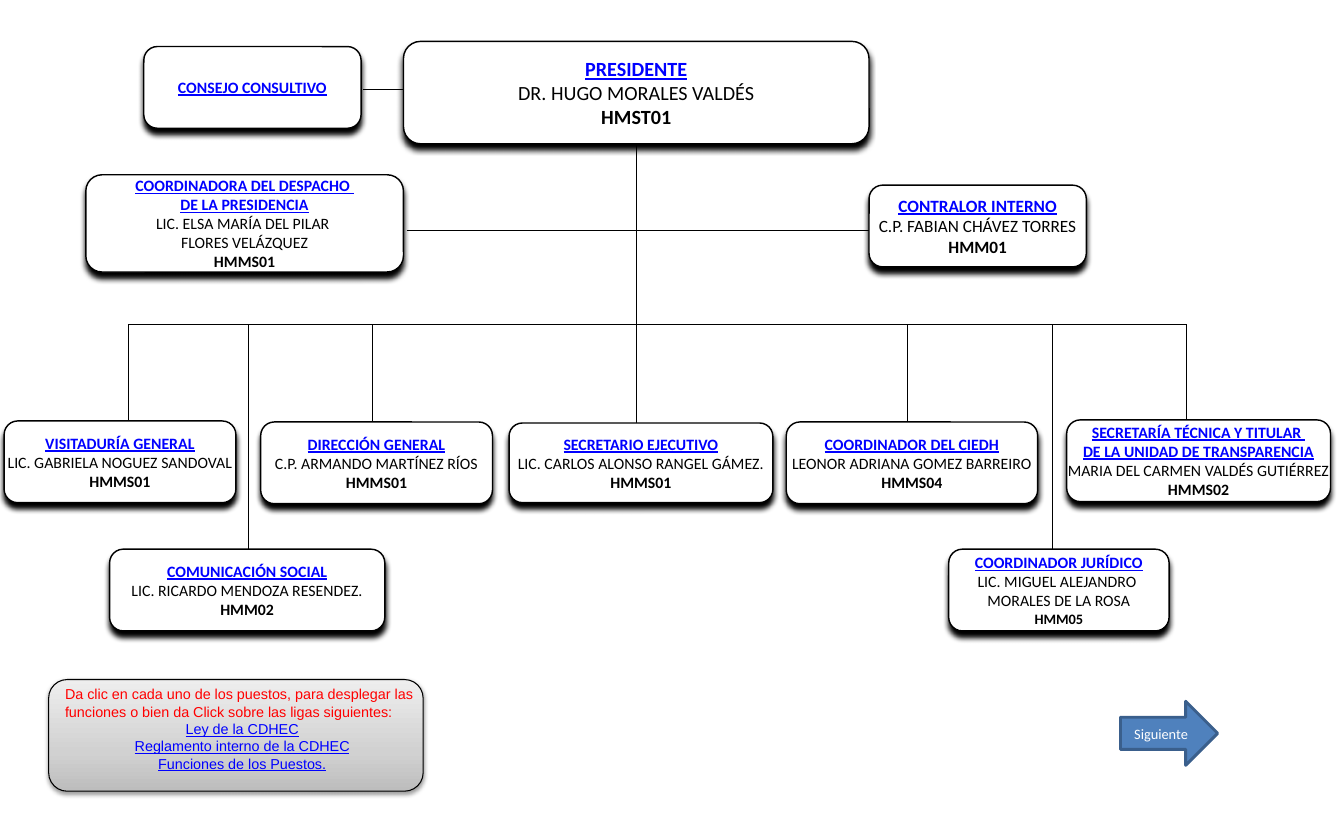
from copy import deepcopy
from dataclasses import dataclass

from lxml.etree import SubElement
from pptx import Presentation
from pptx.dml.color import RGBColor
from pptx.enum.shapes import MSO_CONNECTOR, MSO_SHAPE
from pptx.enum.text import MSO_ANCHOR, MSO_AUTO_SIZE, PP_ALIGN
from pptx.oxml.ns import qn
from pptx.util import Inches, Pt


@dataclass(frozen=True)
class Theme:
    # Colours
    ink: str = "000000"
    paper: str = "FFFFFF"
    link: str = "0000FF"
    notice: str = "FF0000"
    arrow: str = "4F81BD"
    arrow_edge: str = "3A5F8C"
    panel_stops: tuple = ((0, "BDBDBD"), (0.35, "D1D1D1"), (1, "EEEEEE"))
    # Fonts and sizes
    chart_font: str = "Calibri"
    notice_font: str = "Arial"
    small: int = 10
    normal: int = 11
    medium: int = 12
    large: int = 14
    # Lines in points; shadows as opacity %, blur and distance in points
    hairline: float = 0.75
    box_line: float = 1
    arrow_line: float = 2
    box_shadow: tuple = (100, 4, 4)
    panel_shadow: tuple = (38, 3.1, 1.6)


class OrgChart:
    def __init__(self, slide, theme):
        self.slide = slide
        self.theme = theme

    def apply(self, target, values):
        for name, value in values.items():
            setattr(target, name, value)

    def line(self, x1, y1, x2, y2):
        ends = [Inches(value) for value in (x1, y1, x2, y2)]
        line = self.slide.shapes.add_connector(MSO_CONNECTOR.STRAIGHT, *ends)
        self.outline(line, self.theme.ink, self.theme.hairline)
        SubElement(line._element.spPr, qn("a:effectLst"))

    def outline(self, shape, color, width):
        shape.line.color.rgb = RGBColor.from_string(color)
        shape.line.width = Pt(width)

    def shape(self, kind, place, fill, edge, width):
        shape = self.slide.shapes.add_shape(kind, *map(Inches, place))
        shape.shadow.inherit = False
        if fill:
            shape.fill.solid()
            shape.fill.fore_color.rgb = RGBColor.from_string(fill)
        self.outline(shape, edge, width)
        return shape

    def add_shadow(self, shape, opacity, blur, distance):
        effects = shape._element.spPr.find(qn("a:effectLst"))
        shadow = SubElement(effects, qn("a:outerShdw"), blurRad=str(Pt(blur)),
                            dist=str(Pt(distance)), dir="5400000", rotWithShape="0")
        color = SubElement(shadow, qn("a:srgbClr"), val=self.theme.ink)
        SubElement(color, qn("a:alpha"), val=str(opacity * 1000))

    def add_lines(self, frame, lines, font):
        """Each line is (text, size, colour, extra font values)."""
        for index, (text, size, color, extra) in enumerate(lines):
            para = frame.add_paragraph() if index else frame.paragraphs[0]
            para.alignment = PP_ALIGN.CENTER
            span = para.add_run()
            span.text = text
            self.apply(span.font, {"name": font, "size": Pt(size), **extra})
            span.font.color.rgb = RGBColor.from_string(color)

    def post(self, place, size, titles, names=(), code=None, code_size=None):
        theme = self.theme
        box = self.shape(MSO_SHAPE.ROUNDED_RECTANGLE, place, theme.paper,
                         theme.ink, theme.box_line)
        self.add_shadow(box, *theme.box_shadow)
        self.apply(box.text_frame, {
            "word_wrap": False, "vertical_anchor": MSO_ANCHOR.MIDDLE,
            "margin_left": Inches(0.17), "margin_right": Inches(0.17),
            "margin_top": Inches(0.09), "margin_bottom": Inches(0.09)})
        lines = [(text, size, theme.link, {"bold": True, "underline": True})
                 for text in titles]
        lines += [(text, size, theme.ink, {"bold": False}) for text in names]
        if code:
            lines.append((code, code_size or size, theme.ink, {"bold": True}))
        self.add_lines(box.text_frame, lines, theme.chart_font)

    def panel(self, place):
        theme = self.theme
        panel = self.shape(MSO_SHAPE.ROUNDED_RECTANGLE, place, None,
                           theme.ink, theme.hairline)
        panel.fill.gradient()
        panel.fill.gradient_angle = 90
        stops = panel._element.spPr.find(".//" + qn("a:gsLst"))
        stops.insert(1, deepcopy(stops[0]))
        for stop, (position, color) in zip(panel.fill.gradient_stops, theme.panel_stops):
            stop.position = position
            stop.color.rgb = RGBColor.from_string(color)
        self.add_shadow(panel, *theme.panel_shadow)

    def notice(self, place, message, links):
        theme = self.theme
        box = self.slide.shapes.add_textbox(*map(Inches, place))
        self.apply(box.text_frame, {"word_wrap": True,
                                    "auto_size": MSO_AUTO_SIZE.SHAPE_TO_FIT_TEXT})
        lines = [(message, theme.small, theme.notice, {})]
        lines += [(text, theme.small, theme.link, {"underline": True}) for text in links]
        self.add_lines(box.text_frame, lines, theme.notice_font)
        box.text_frame.paragraphs[0].alignment = PP_ALIGN.LEFT

    def arrow(self, place, text):
        theme = self.theme
        arrow = self.shape(MSO_SHAPE.RIGHT_ARROW, place, theme.arrow,
                           theme.arrow_edge, theme.arrow_line)
        self.apply(arrow.text_frame, {"word_wrap": True,
                                      "vertical_anchor": MSO_ANCHOR.MIDDLE})
        self.add_lines(arrow.text_frame, [(text, theme.small, theme.paper, {})],
                       theme.chart_font)


def main():
    deck = Presentation()
    deck.slide_width, deck.slide_height = Inches(12.99), Inches(7.88)
    theme = Theme()
    page = OrgChart(deck.slides.add_slide(deck.slide_layouts[6]), theme)

    # Trunk, side branches and the bar over the areas
    bar_y, side_y, trunk_x = 3.14, 2.23, 6.15
    page.line(trunk_x, 1.29, trunk_x, 4.31)
    page.line(3.51, 0.87, 4.76, 0.87)
    page.line(3.93, side_y, 6.98, side_y)
    page.line(6.98, side_y, 10.2, side_y)
    page.line(1.24, bar_y, 11.47, bar_y)

    # Drops from the bar to each area
    upper_end, lower_end = 4.66, 5.81
    for x, end in ((1.24, upper_end), (2.4, lower_end), (3.6, upper_end),
                   (8.77, upper_end), (10.17, lower_end), (11.47, upper_end)):
        page.line(x, bar_y, x, end)

    # Presidency and its staff
    page.post((3.9, 0.4, 4.5, 0.99), theme.large, ["PRESIDENTE"],
              ["DR. HUGO MORALES VALDÉS"], "HMST01")
    page.post((1.39, 0.45, 2.1, 0.79), theme.normal, ["CONSEJO CONSULTIVO"])
    page.post((0.83, 1.69, 3.07, 0.94), theme.normal,
              ["COORDINADORA DEL DESPACHO ", "DE LA PRESIDENCIA"],
              ["LIC. ELSA MARÍA DEL PILAR ", "FLORES VELÁZQUEZ"], "HMMS01")
    page.post((8.4, 1.79, 2.1, 0.79), theme.medium, ["CONTRALOR INTERNO"],
              ["C.P. FABIAN CHÁVEZ TORRES"], "HMM01")

    # Upper row of areas
    page.post((0.04, 4.07, 2.24, 0.79), theme.normal, ["VISITADURÍA GENERAL"],
              ["LIC. GABRIELA NOGUEZ SANDOVAL"], "HMMS01")
    page.post((2.52, 4.08, 2.24, 0.79), theme.normal, ["DIRECCIÓN GENERAL"],
              ["C.P. ARMANDO MARTÍNEZ RÍOS"], "HMMS01")
    page.post((4.92, 4.09, 2.55, 0.77), theme.normal, ["SECRETARIO EJECUTIVO"],
              ["LIC. CARLOS ALONSO RANGEL GÁMEZ."], "HMMS01")
    page.post((7.6, 4.08, 2.43, 0.79), theme.normal, ["COORDINADOR DEL CIEDH"],
              ["LEONOR ADRIANA GOMEZ BARREIRO"], "HMMS04")
    page.post((10.31, 4.06, 2.55, 0.79), theme.normal,
              ["SECRETARÍA TÉCNICA Y TITULAR ", "DE LA UNIDAD DE TRANSPARENCIA"],
              ["MARIA DEL CARMEN VALDÉS GUTIÉRREZ"], "HMMS02")

    # Lower row of areas
    page.post((1.06, 5.31, 2.66, 0.79), theme.normal, ["COMUNICACIÓN SOCIAL"],
              ["LIC. RICARDO MENDOZA RESENDEZ."], "HMM02")
    page.post((9.17, 5.31, 2.13, 0.79), theme.normal, ["COORDINADOR JURÍDICO"],
              ["LIC. MIGUEL ALEJANDRO ", "MORALES DE LA ROSA"], "HMM05", theme.small)

    # Instructions and next arrow
    page.panel((0.47, 6.57, 3.62, 1.08))
    page.notice((0.53, 6.58, 3.62, 0.94),
                "Da clic en cada uno de los puestos, para desplegar las funciones "
                "o bien da Click sobre las ligas siguientes:",
                ["Ley de la CDHEC", "Reglamento interno de la CDHEC",
                 "Funciones de los Puestos."])
    page.arrow((10.83, 6.78, 0.94, 0.62), "Siguiente")

    deck.save("out.pptx")


if __name__ == "__main__":
    main()
